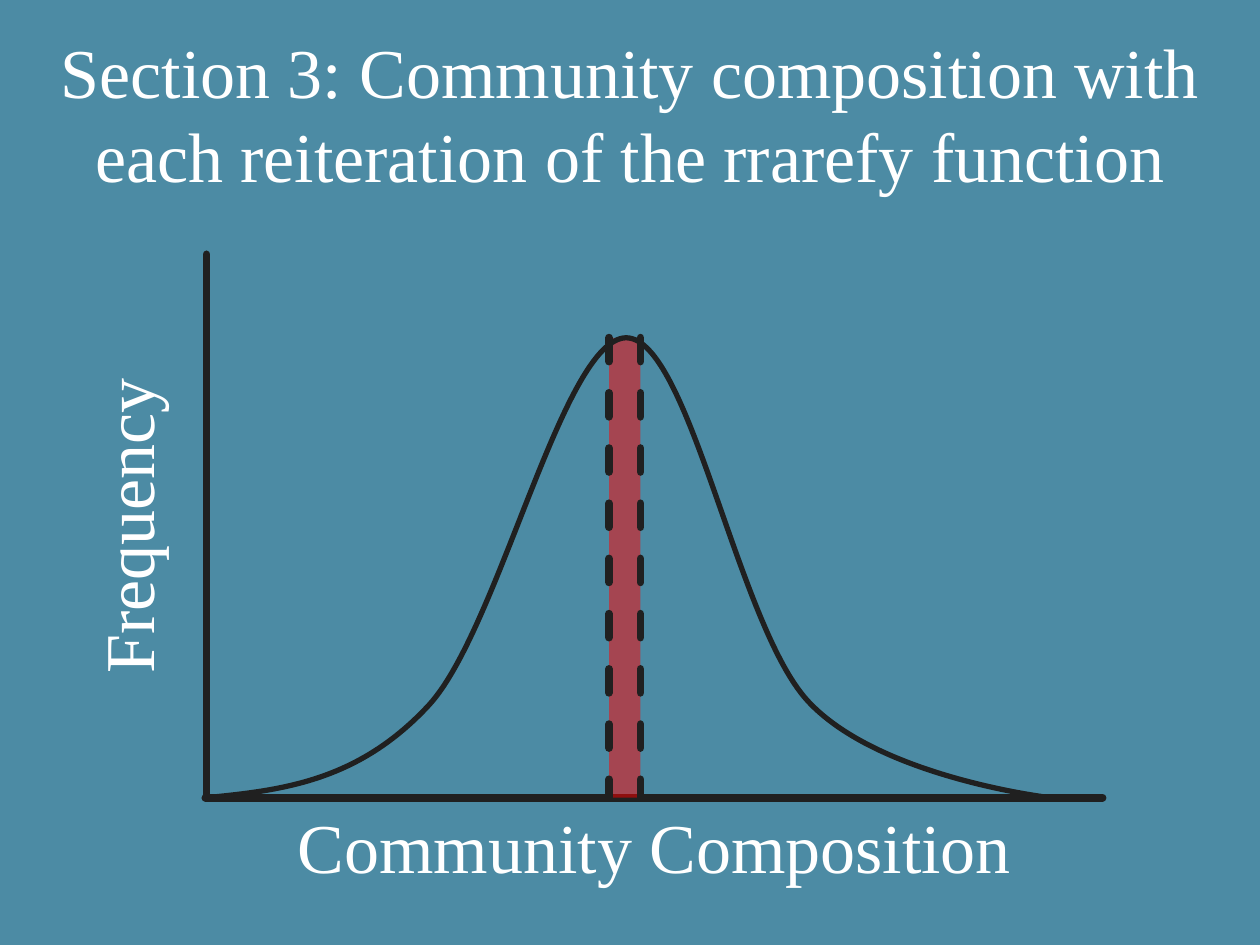
"""Build a slide with a bell curve of community composition and its marked centre."""
import pptx
import pptx.dml.color
import pptx.enum.dml
import pptx.enum.shapes
import pptx.enum.text
import pptx.oxml
import pptx.oxml.ns
import pptx.util

Pt = pptx.util.Pt
qn = pptx.oxml.ns.qn

TITLE = "Section 3: Community composition with each reiteration of the rrarefy function"
TITLE_PLACE = (24, 12.5, 672, 78)
LABELS = [
    ("Frequency", (-82.8, 272.9, 311, 55.7), 270),
    ("Community Composition", (118, 455.8, 512, 55.7), 0),
]
FONT, SIZE = "Times New Roman", 40
BACKGROUND, INK, WHITE, RED = "4C8BA4", "202020", "FFFFFF", "FF0000"
LEFT, RIGHT, TOP, BASE = 118, 630, 145.4, 455.8
PEAK = 193
BAND_LEFT, BAND_RIGHT = 348, 366
AXES = [((RIGHT, BASE), (LEFT - 0.6, BASE)), ((LEFT, TOP), (LEFT, BASE))]
LIMITS = [((x, PEAK), (x, BASE)) for x in (BAND_RIGHT, BAND_LEFT)]
CURVE_START = (LEFT, BASE)
CURVE_CONTROLS = [
    (161.3, 451.6), (205, 446.5), (245.4, 402.6),
    (285.3, 358.6), (321.8, PEAK + 0.5), (357.8, PEAK),
    (393.8, PEAK), (421.2, 356.4), (461.5, 400.4),
    (501.8, 444.3), (600, BASE), (600, BASE),
]


def colour(value):
    return pptx.dml.color.RGBColor.from_string(value)


def points(values):
    return [Pt(value) for value in values]


def style_line(shape, width, dashed=False):
    shape.line.color.rgb = colour(INK)
    shape.line.width = Pt(width)
    if dashed:
        shape.line.dash_style = pptx.enum.dml.MSO_LINE.DASH
    shape.line._get_or_add_ln().set("cap", "rnd")


def add_line(shapes, start, end, dashed=False):
    line = shapes.add_connector(
        pptx.enum.shapes.MSO_CONNECTOR.STRAIGHT, *points(start + end))
    style_line(line, 4.5, dashed)
    line._element.spPr.append(pptx.oxml.parse_xml(
        '<a:effectLst xmlns:a="http://schemas.openxmlformats.org/drawingml/2006/main"/>'))


def add_band(shapes):
    band = shapes.add_shape(
        pptx.enum.shapes.MSO_SHAPE.RECTANGLE,
        *points((BAND_LEFT, PEAK, BAND_RIGHT - BAND_LEFT, BASE - PEAK)))
    band.shadow.inherit = False
    band.line.fill.background()
    band.fill.solid()
    band.fill.fore_color.rgb = colour(RED)
    tint = band._element.spPr.find(".//" + qn("a:srgbClr"))
    tint.append(tint.makeelement(qn("a:alpha"), {"val": "50000"}))


def add_curve(shapes):
    builder = shapes.build_freeform(*points(CURVE_START))
    builder.add_line_segments([points(spot) for spot in CURVE_CONTROLS], close=False)
    curve = builder.convert_to_shape()
    curve.shadow.inherit = False
    curve.fill.background()
    style_line(curve, 3)
    outline = curve._element.spPr.find(".//" + qn("a:path"))
    segments = outline.findall(qn("a:lnTo"))
    for index in range(0, len(segments), 3):
        bend = outline.makeelement(qn("a:cubicBezTo"), {})
        outline.append(bend)
        for segment in segments[index:index + 3]:
            bend.append(segment[0])
            outline.remove(segment)


def write(box, text):
    box.text_frame.word_wrap = True
    para = box.text_frame.paragraphs[0]
    para.text = text
    para.alignment = pptx.enum.text.PP_ALIGN.CENTER
    para.font.name = FONT
    para.font.size = Pt(SIZE)
    para.font.color.rgb = colour(WHITE)


def main():
    deck = pptx.Presentation()
    deck.slide_width, deck.slide_height = points((720, 540))
    page = deck.slides.add_slide(deck.slide_layouts[5])
    page.background.fill.solid()
    page.background.fill.fore_color.rgb = colour(BACKGROUND)

    title = page.shapes.title
    title.left, title.top, title.width, title.height = points(TITLE_PLACE)
    title.text_frame.vertical_anchor = pptx.enum.text.MSO_ANCHOR.TOP
    title.text_frame.auto_size = pptx.enum.text.MSO_AUTO_SIZE.NONE
    write(title, TITLE)

    graph = page.shapes.add_group_shape().shapes
    add_line(graph, *AXES[0])
    add_band(graph)
    add_line(graph, *AXES[1])
    add_curve(graph)
    for limit in LIMITS:
        add_line(graph, *limit, dashed=True)

    for text, place, rotation in LABELS:
        label = page.shapes.add_textbox(*points(place))
        label.rotation = rotation
        write(label, text)
        label.text_frame.auto_size = pptx.enum.text.MSO_AUTO_SIZE.SHAPE_TO_FIT_TEXT

    deck.save("out.pptx")


if __name__ == "__main__":
    main()
